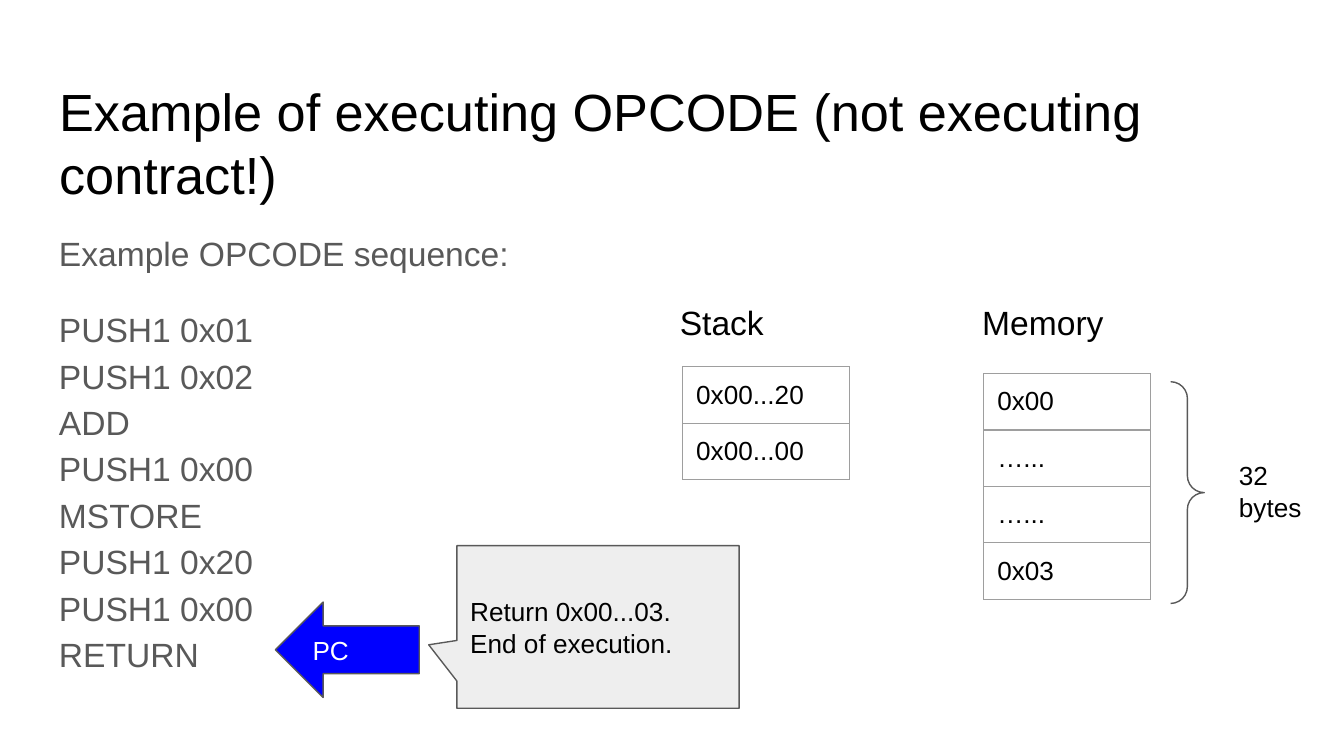
from pptx import Presentation
from pptx.dml.color import RGBColor
from pptx.enum.shapes import MSO_SHAPE as Kind
from pptx.enum.text import MSO_ANCHOR as Anchor, MSO_AUTO_SIZE as Fit, PP_ALIGN as Align
from pptx.util import Inches, Pt
from lxml.etree import SubElement
from pptx.oxml.ns import qn

BLACK = RGBColor(0, 0, 0)
WHITE = RGBColor(255, 255, 255)
GRAY = RGBColor(0x59, 0x59, 0x59)
PALE = RGBColor(0xEE, 0xEE, 0xEE)
BLUE = RGBColor(0, 0, 255)
EDGE = "9E9E9E"

CODE = ["PUSH1 0x01", "PUSH1 0x02", "ADD", "PUSH1 0x00",
        "MSTORE", "PUSH1 0x20", "PUSH1 0x00", "RETURN"]


def write(frame, lines, size, color=BLACK, anchor=Anchor.TOP):
    frame.word_wrap = True
    frame.auto_size = Fit.NONE
    frame.vertical_anchor = anchor
    frame.margin_left = frame.margin_right = Inches(0.1)
    frame.margin_top = frame.margin_bottom = Inches(0.1)
    frame.text = "\n".join(lines)
    style(frame, size, color)


def style(frame, size, color):
    for para in frame.paragraphs:
        para.alignment = Align.LEFT
        for run in para.runs:
            run.font.name = "Arial"
            run.font.size = Pt(size)
            run.font.color.rgb = color


def add_title(slide, text):
    title = slide.shapes.title
    title.left, title.top = Inches(0.34), Inches(0.49)
    title.width, title.height = Inches(9.32), Inches(0.63)
    write(title.text_frame, [text], 28)


def add_text(slide, box, text, size):
    shape = slide.shapes.add_textbox(*map(Inches, box))
    write(shape.text_frame, [text], size)
    return shape.text_frame


def add_code(slide):
    frame = add_text(slide, (0.34, 1.59, 9.32, 3.93), "Example OPCODE sequence:", 18)
    para = frame.add_paragraph()
    para.text = "\v".join(CODE)
    para.space_before = Pt(16)
    for item in frame.paragraphs:
        item.line_spacing = 1.15
    style(frame, 18, GRAY)


def add_shape(slide, kind, box, adjust, fill=None):
    shape = slide.shapes.add_shape(kind, *map(Inches, box))
    shape.shadow.inherit = False
    for i, value in enumerate(adjust):
        shape.adjustments[i] = value
    if fill is None:
        shape.fill.background()
    else:
        shape.fill.solid()
        shape.fill.fore_color.rgb = fill
    shape.line.color.rgb = GRAY
    shape.line.width = Pt(0.75)
    return shape


def set_border(cell):
    props = cell._tc.get_or_add_tcPr()
    for i, side in enumerate(("lnL", "lnR", "lnT", "lnB")):
        line = props.makeelement(qn(f"a:{side}"), {"w": str(Pt(0.75))})
        fill = SubElement(line, qn("a:solidFill"))
        SubElement(fill, qn("a:srgbClr"), val=EDGE)
        props.insert(i, line)


def add_cells(slide, left, top, values):
    row = Inches(0.42)
    table = slide.shapes.add_table(len(values), 1, Inches(left), Inches(top),
                                   Inches(1.24), row * len(values)).table
    table.first_row = table.horz_banding = False
    for i, value in enumerate(values):
        table.rows[i].height = row
        cell = table.cell(i, 0)
        cell.margin_left = cell.margin_right = Inches(0.1)
        cell.margin_top = cell.margin_bottom = Inches(0.1)
        cell.text_frame.text = value
        style(cell.text_frame, 14, BLACK)
        cell.fill.background()
        set_border(cell)


def main():
    deck = Presentation()
    deck.slide_width = Inches(10)
    deck.slide_height = deck.slide_width * 9 // 16
    slide = deck.slides.add_slide(deck.slide_layouts[5])
    add_title(slide, "Example of executing OPCODE (not executing contract!)")
    add_code(slide)

    add_cells(slide, 5.08, 2.73, ["0x00...20", "0x00...00"])
    add_text(slide, (4.96, 2.15, 2.68, 0.6), "Stack", 18)
    add_text(slide, (7.21, 2.15, 2.68, 0.6), "Memory", 18)
    add_cells(slide, 7.32, 2.78, ["0x00", "…...", "…...", "0x03"])

    arrow = add_shape(slide, Kind.LEFT_ARROW, (2.05, 4.48, 1.07, 0.71), (0.5, 0.5), BLUE)
    write(arrow.text_frame, ["PC"], 14, WHITE, Anchor.MIDDLE)
    add_shape(slide, Kind.RIGHT_BRACE, (8.71, 2.84, 0.25, 1.65), (0.5, 0.5))
    add_text(slide, (9.12, 3.32, 0.77, 0.6), "32 bytes", 14)
    note = add_shape(slide, Kind.ROUNDED_RECTANGULAR_CALLOUT, (3.4, 4.06, 2.1, 1.21),
                     (-0.6, 0.11, 0), PALE)
    write(note.text_frame, ["Return 0x00...03.", "End of execution."], 14,
          anchor=Anchor.MIDDLE)
    deck.save("out.pptx")


if __name__ == "__main__":
    main()
